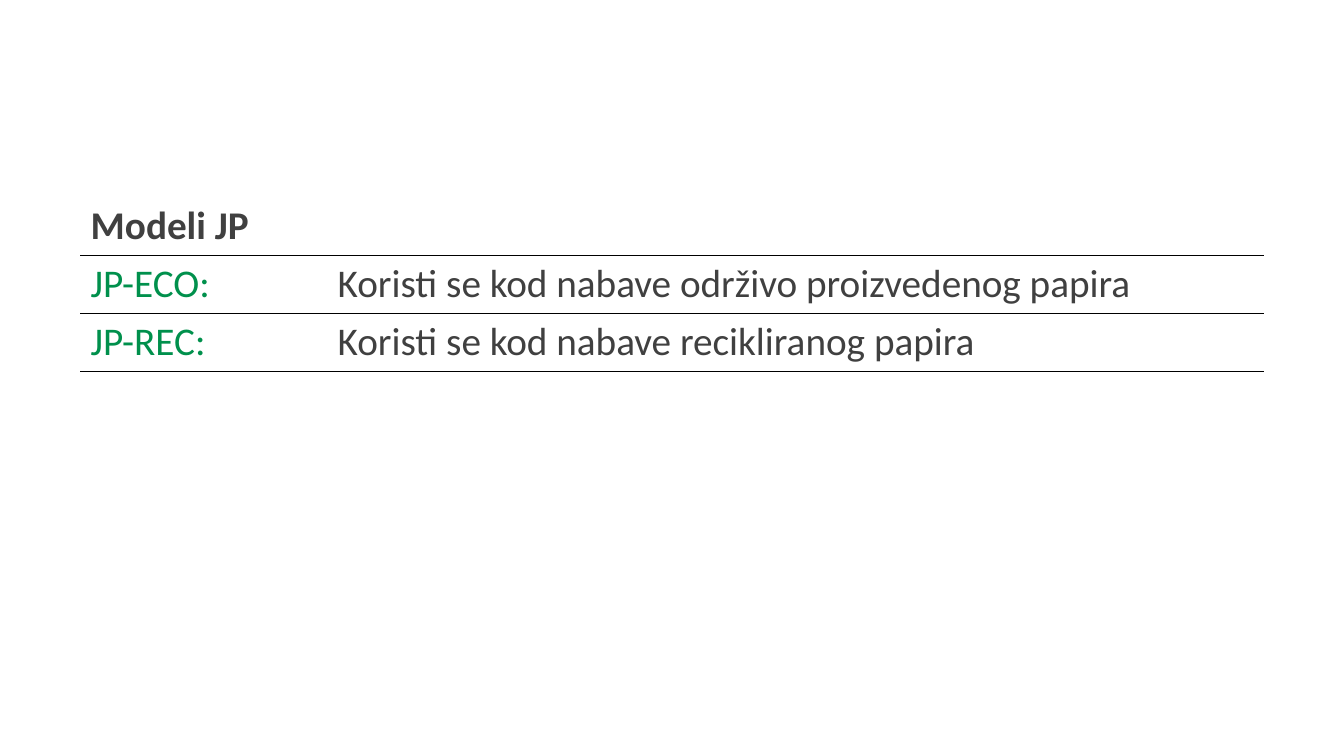
from lxml.etree import SubElement
from pptx import Presentation
from pptx.dml.color import RGBColor
from pptx.oxml import parse_xml
from pptx.oxml.ns import nsdecls, qn
from pptx.util import Inches, Pt


def color(hex_string):
    return RGBColor.from_string(hex_string)


class ModelSlide:
    FONT, SIZE = "Calibri", 28
    TEXT, CODE, RULE, PAPER = "404040", "00904C", "000000", "FFFFFF"

    def __init__(self, presentation):
        self.width = presentation.slide_width
        self.height = presentation.slide_height
        self.slide = presentation.slides.add_slide(presentation.slide_layouts[6])

    def across(self, percent):
        return round(self.width * percent / 100)

    def down(self, percent):
        return round(self.height * percent / 100)

    def table(self, left, top, column_widths, row_height, rows):
        frame = self.slide.shapes.add_table(
            len(rows), len(column_widths), self.across(left), self.down(top),
            self.across(sum(column_widths)), self.down(row_height * len(rows)))
        table = frame.table
        table.first_row = table.horz_banding = False
        for column, width in zip(table.columns, column_widths):
            column.width = self.across(width)
        for row_index, texts in enumerate(rows):
            table.rows[row_index].height = self.down(row_height)
            for column_index, text in enumerate(texts):
                self.cell(table.cell(row_index, column_index), text,
                          header=row_index == 0, code=column_index == 0)

    def cell(self, cell, text, header, code):
        cell.fill.background()
        self.borders(cell, top=self.PAPER if header else self.RULE)
        paragraph = cell.text_frame.paragraphs[0]
        paragraph.text = text
        font = paragraph.font
        font.name, font.size, font.bold = self.FONT, Pt(self.SIZE), header
        font.color.rgb = color(self.CODE if code and not header else self.TEXT)

    def borders(self, cell, top):
        # Only the horizontal rules are visible
        sides = {"L": self.PAPER, "R": self.PAPER, "T": top, "B": self.RULE}
        properties = cell._tc.get_or_add_tcPr()
        for index, (side, line_color) in enumerate(sides.items()):
            line = parse_xml(f'<a:ln{side} {nsdecls("a")} w="{Pt(1)}"/>')
            fill = SubElement(line, qn("a:solidFill"))
            SubElement(fill, qn("a:srgbClr"), val=line_color)
            properties.insert(index, line)


def main():
    presentation = Presentation()
    presentation.slide_width = Inches(13.33)
    presentation.slide_height = Inches(7.5)
    models = ModelSlide(presentation)

    # Paper models and their use
    models.table(
        left=6, top=26.13, column_widths=(18.38, 69.62), row_height=7.6,
        rows=[
            ("Modeli JP", ""),
            ("JP-ECO:", "Koristi se kod nabave održivo proizvedenog papira"),
            ("JP-REC:", "Koristi se kod nabave recikliranog papira"),
        ])
    presentation.save("out.pptx")


if __name__ == "__main__":
    main()
